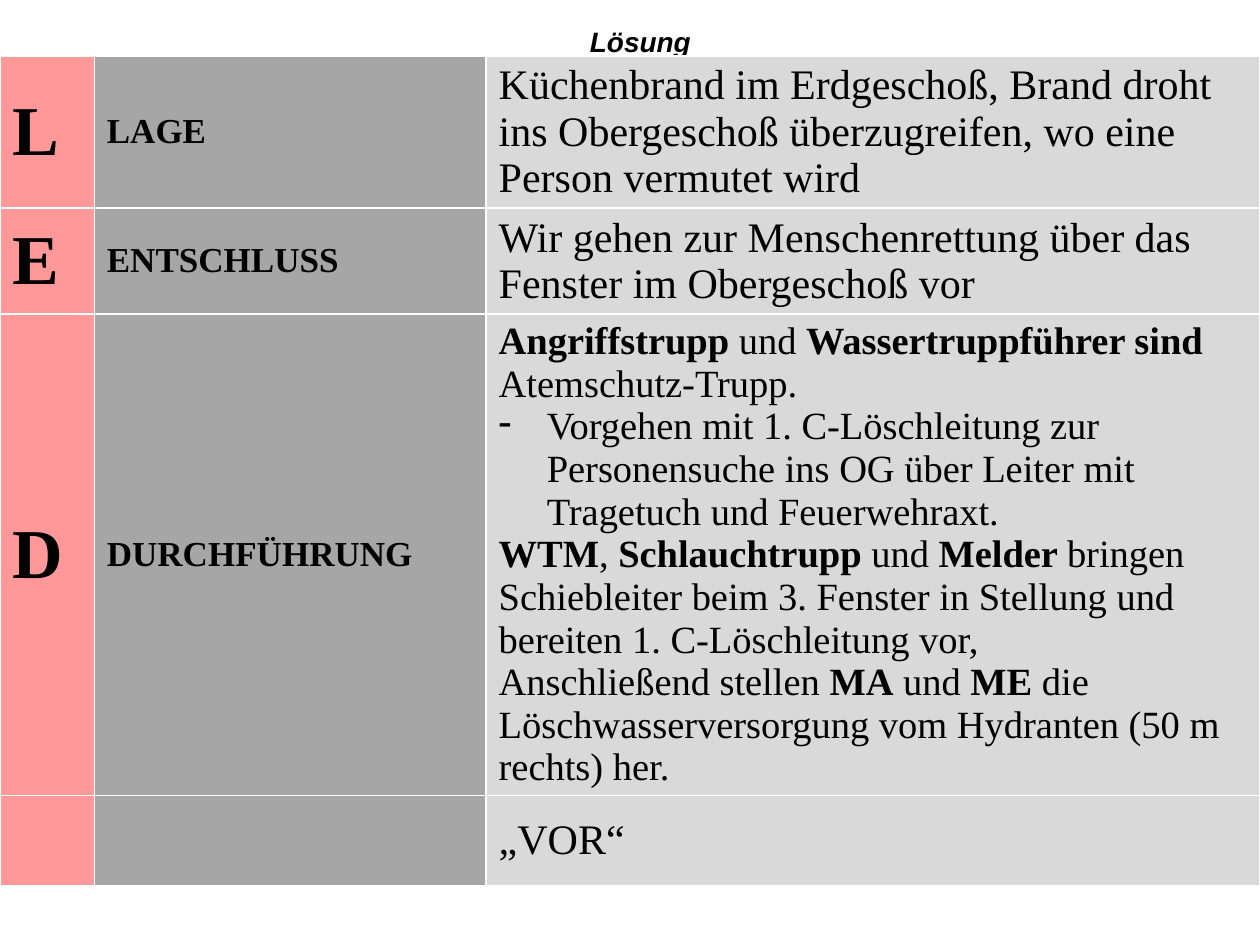
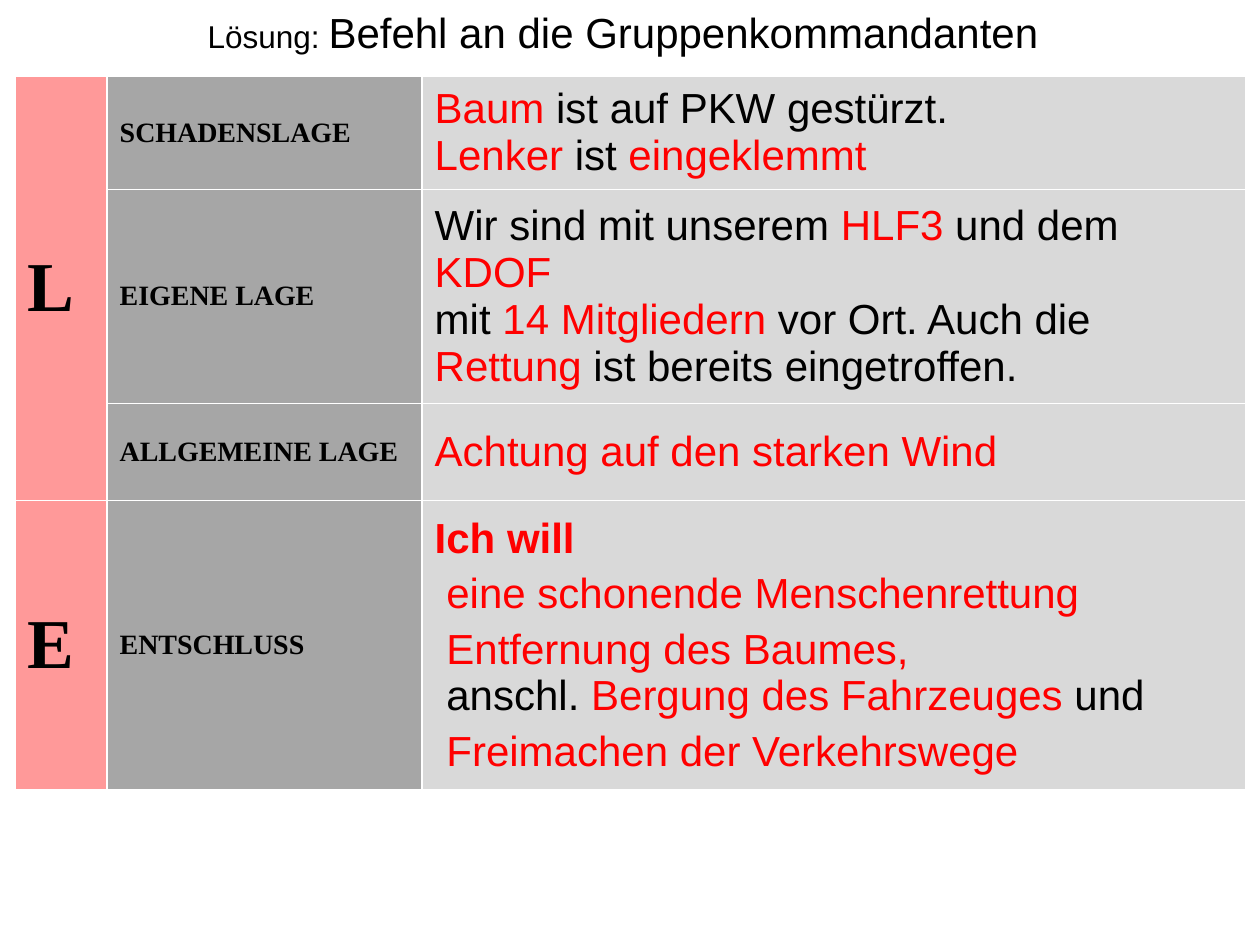
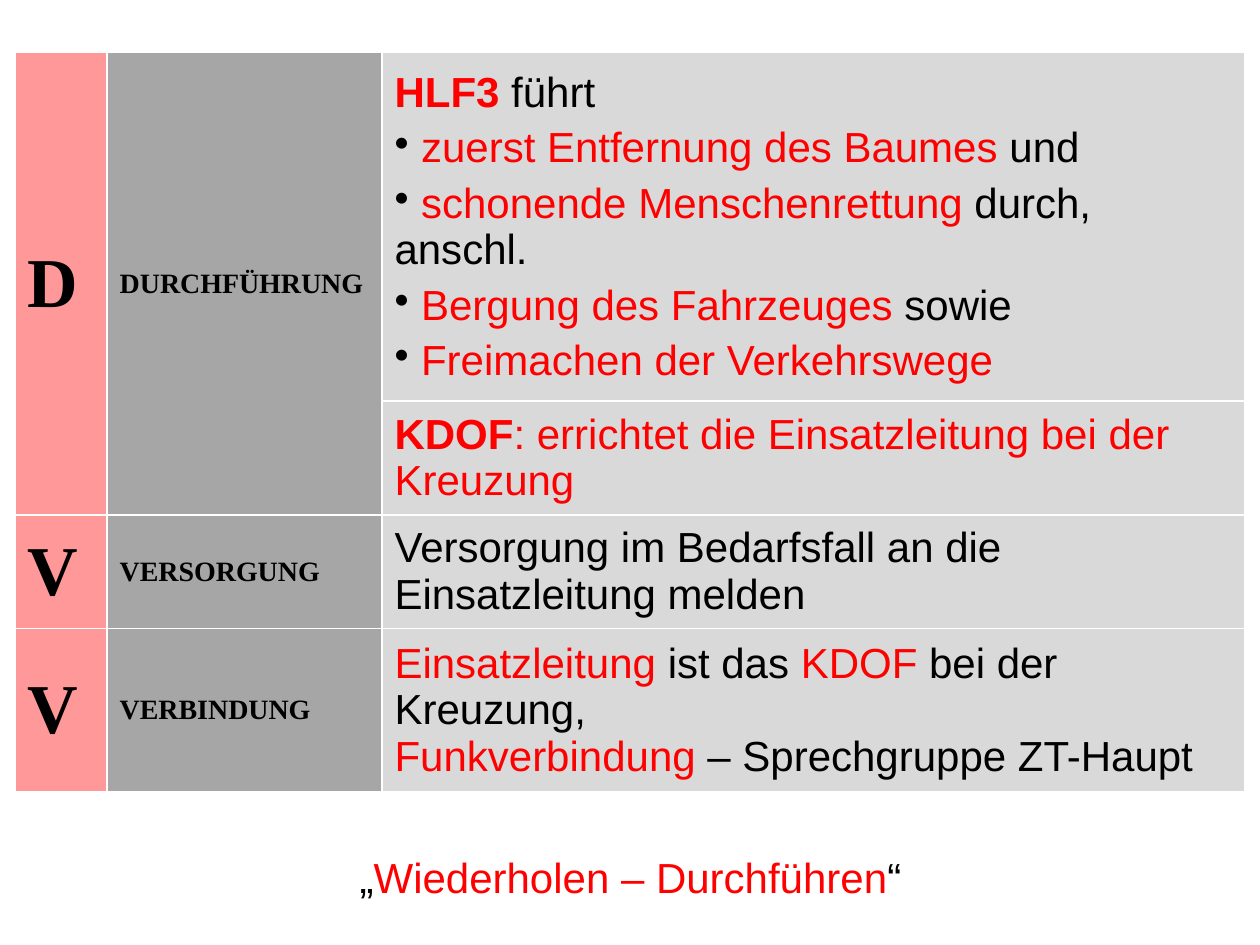
import pptx
import pptx.dml.color
import pptx.enum.shapes
import pptx.enum.text
import pptx.oxml
import pptx.oxml.ns
import pptx.util
from pptx.util import Cm

# Shared colours, fonts and sizes
WHITE, BLACK, RED = "FFFFFF", "000000", "FF0000"
COLUMN_FILLS = ("FF9999", "A6A6A6", "D9D9D9")
SERIF, SANS = "Times New Roman", "Arial"
LETTER_SIZE, ORDER_SIZE = 40, 24
SPACE_BEFORE = 4.8
DASH_INDENT = Cm(0.97)
ORDER_LEFT = Cm(0.31)

# Order texts: a cell is a list of paragraphs, each (runs, options);
# a run is (text, marks) with "b" for bold and "r" for red.
SPACED = {"space": SPACE_BEFORE}
BULLETED = {"space": SPACE_BEFORE, "bullet": "•"}
DASHED = {"bullet": "-", "indent": DASH_INDENT}

KITCHEN_FIRE = [
    ("L", "LAGE", [([("Küchenbrand im Erdgeschoß, Brand droht ins Obergeschoß "
                      "überzugreifen, wo eine Person vermutet wird", "")], {})]),
    ("E", "ENTSCHLUSS", [([("Wir gehen zur Menschenrettung über das Fenster im "
                            "Obergeschoß vor", "")], {})]),
    ("D", "DURCHFÜHRUNG", [
        ([("Angriffstrupp ", "b"), ("und ", ""), ("Wassertruppführer sind ", "b"),
          ("Atemschutz-Trupp.", "")], {}),
        ([("Vorgehen mit 1. C-Löschleitung zur Personensuche ins OG über Leiter mit "
           "Tragetuch und Feuerwehraxt.", "")], DASHED),
        ([("WTM", "b"), (", ", ""), ("Schlauchtrupp", "b"), (" und ", ""), ("Melder ", "b"),
          ("bringen Schiebleiter beim 3. Fenster in Stellung und bereiten "
           "1. C-Löschleitung vor,", "")], {}),
        ([("Anschließend stellen ", ""), ("MA", "b"), (" und ", ""), ("ME ", "b"),
          ("die Löschwasserversorgung vom Hydranten (50 m rechts) her.", "")], {}),
    ]),
    ("", "", [([("„VOR“", "")], {})]),
]

# None continues the merged cell above
SITUATION = [
    ("L", "SCHADENSLAGE", [
        ([("Baum", "r"), (" ist auf PKW gestürzt.", "")], {}),
        ([("Lenker ", "r"), ("ist", ""), (" eingeklemmt", "r")], {}),
    ]),
    (None, "EIGENE LAGE", [
        ([("Wir sind mit unserem", ""), (" HLF3 ", "r"), ("und dem", ""),
          (" KDOF", "r")], SPACED),
        ([("mit", ""), (" 14 Mitgliedern ", "r"), ("vor Ort. Auch die ", ""),
          ("Rettung", "r"), (" ist bereits eingetroffen.", "")], {}),
    ]),
    (None, "ALLGEMEINE LAGE", [([("Achtung auf den starken Wind", "r")], SPACED)]),
    ("E", "ENTSCHLUSS", [
        ([("Ich will", "br")], SPACED),
        ([(" ", ""), ("eine schonende Menschenrettung", "r")], SPACED),
        ([(" ", ""), ("Entfernung des Baumes,", "r")], SPACED),
        ([(" anschl. ", ""), ("Bergung des Fahrzeuges", "r"), (" und", "")], {}),
        ([(" ", ""), ("Freimachen der Verkehrswege", "r")], SPACED),
    ]),
]

EXECUTION = [
    ("D", "DURCHFÜHRUNG", [
        ([("HLF3", "br"), (" führt", "")], SPACED),
        ([(" ", ""), ("zuerst Entfernung des Baumes", "r"), (" und", "")], BULLETED),
        ([(" ", ""), ("schonende Menschenrettung", "r"), (" durch, anschl.", "")], BULLETED),
        ([(" ", ""), ("Bergung des Fahrzeuges", "r"), (" sowie", "")], BULLETED),
        ([(" ", ""), ("Freimachen der Verkehrswege", "r")], BULLETED),
    ]),
    (None, None, [([("KDOF", "br"),
                    (": errichtet die Einsatzleitung bei der Kreuzung", "r")], {})]),
    ("V", "VERSORGUNG", [([("Versorgung im Bedarfsfall an die Einsatzleitung melden", "")], {})]),
    ("V", "VERBINDUNG", [
        ([("Einsatzleitung ", "r"), ("ist das ", ""), ("KDOF ", "r"),
          ("bei der Kreuzung,", "")], {}),
        ([("Funkverbindung ", "r"), ("– Sprechgruppe ZT-Haupt", "")], {}),
    ]),
]


def rgb(code):
    return pptx.dml.color.RGBColor.from_string(code)


# Text
def add_run(paragraph, text, font, size, marks=""):
    run = paragraph.add_run()
    run.text = text
    run.font.name = font
    run.font.size = pptx.util.Pt(size)
    run.font.bold = "b" in marks
    run.font.italic = "i" in marks
    run.font.color.rgb = rgb(RED if "r" in marks else BLACK)


def set_bullet(paragraph, sign, indent):
    properties = paragraph._p.get_or_add_pPr()
    properties.set("marL", str(int(indent)))
    properties.set("indent", str(-int(indent)))
    bullet = pptx.oxml.parse_xml(
        f'<a:buChar {pptx.oxml.ns.nsdecls("a")} char="{sign}"/>')
    properties.append(bullet)


def write_paragraphs(frame, paragraphs, font, size):
    for index, (runs, options) in enumerate(paragraphs):
        paragraph = frame.add_paragraph() if index else frame.paragraphs[0]
        if "space" in options:
            paragraph.space_before = pptx.util.Pt(options["space"])
        if "bullet" in options:
            set_bullet(paragraph, options["bullet"], options.get("indent", 0))
        for text, marks in runs:
            add_run(paragraph, text, font, size, marks)


def add_centred_line(slide, left, top, width, runs):
    line = slide.shapes.add_textbox(left, top, width, Cm(1.27))
    line.text_frame.word_wrap = True
    paragraph = line.text_frame.paragraphs[0]
    paragraph.alignment = pptx.enum.text.PP_ALIGN.CENTER
    for text, size, marks in runs:
        add_run(paragraph, text, SANS, size, marks)


def add_solution_label(slide):
    label = slide.shapes.add_shape(pptx.enum.shapes.MSO_SHAPE.RECTANGLE,
                                   Cm(9.1), Cm(0.33), Cm(7.62), Cm(1.02))
    label.shadow.inherit = False
    label.fill.solid()
    label.fill.fore_color.rgb = rgb(WHITE)
    label.line.fill.background()
    paragraph = label.text_frame.paragraphs[0]
    paragraph.alignment = pptx.enum.text.PP_ALIGN.CENTER
    add_run(paragraph, "Lösung", SANS, 16, "bi")


# Order table
def style_cell(cell, fill):
    properties = cell._tc.get_or_add_tcPr()
    for side in ("lnL", "lnR", "lnT", "lnB"):
        properties.append(pptx.oxml.parse_xml(
            f'<a:{side} {pptx.oxml.ns.nsdecls("a")} w="12700"><a:solidFill>'
            f'<a:srgbClr val="{WHITE}"/></a:solidFill></a:{side}>'))
    cell.fill.solid()
    cell.fill.fore_color.rgb = rgb(fill)
    cell.vertical_anchor = pptx.enum.text.MSO_ANCHOR.MIDDLE


def merge_continued(table, rows, column):
    start = 0
    for index in range(1, len(rows) + 1):
        if index == len(rows) or rows[index][column] is not None:
            if index - start > 1:
                table.cell(start, column).merge(table.cell(index - 1, column))
            start = index


def add_order_table(slide, left, top, widths, heights, rows, heading_size,
                    order_font, small_rows=()):
    frame = slide.shapes.add_table(len(rows), len(widths), left, top,
                                   Cm(sum(widths)), Cm(sum(heights)))
    table = frame.table
    table.first_row = table.horz_banding = False
    for column, width in zip(table.columns, widths):
        column.width = Cm(width)
    for row, height in zip(table.rows, heights):
        row.height = Cm(height)

    for index, (letter, heading, order) in enumerate(rows):
        cells = [table.cell(index, column) for column in range(3)]
        for cell, fill in zip(cells, COLUMN_FILLS):
            style_cell(cell, fill)
        for cell, text, size in zip(cells, (letter, heading), (LETTER_SIZE, heading_size)):
            if text:
                write_paragraphs(cell.text_frame, [([(text, "b")], {})], SERIF, size)
        order_size = 22 if index in small_rows else ORDER_SIZE
        write_paragraphs(cells[2].text_frame, order, order_font, order_size)

    for column in (0, 1):
        merge_continued(table, rows, column)


def main():
    deck = pptx.Presentation()
    deck.slide_width, deck.slide_height = Cm(25.4), Cm(19.05)
    fire, situation, execution = (
        deck.slides.add_slide(deck.slide_layouts[6]) for _ in range(3))

    # Kitchen fire order
    add_solution_label(fire)
    add_order_table(fire, 0, Cm(1.13), (1.9, 7.9, 15.6), (3.04, 2.14, 9.7, 1.81),
                    KITCHEN_FIRE, 20, SERIF, small_rows=(2,))

    # Order to the group commanders: situation and decision
    add_centred_line(situation, ORDER_LEFT, 0, Cm(24.5),
                     [("Lösung: ", 18, ""), ("Befehl an die Gruppenkommandanten", 24, "")])
    add_order_table(situation, ORDER_LEFT, Cm(1.53), (1.85, 6.35, 16.6),
                    (2.28, 4.32, 1.95, 5.83), SITUATION, 16, SANS)

    # Execution, supply and communication
    add_centred_line(execution, ORDER_LEFT, Cm(17.04), Cm(24.8),
                     [("„", 24, ""), ("Wiederholen – Durchführen", 24, "r"), ("“", 24, "")])
    add_order_table(execution, ORDER_LEFT, Cm(1.06), (1.85, 5.54, 17.4),
                    (7.01, 2.29, 2.29, 3.3), EXECUTION, 16, SANS)

    deck.save("out.pptx")


if __name__ == "__main__":
    main()
